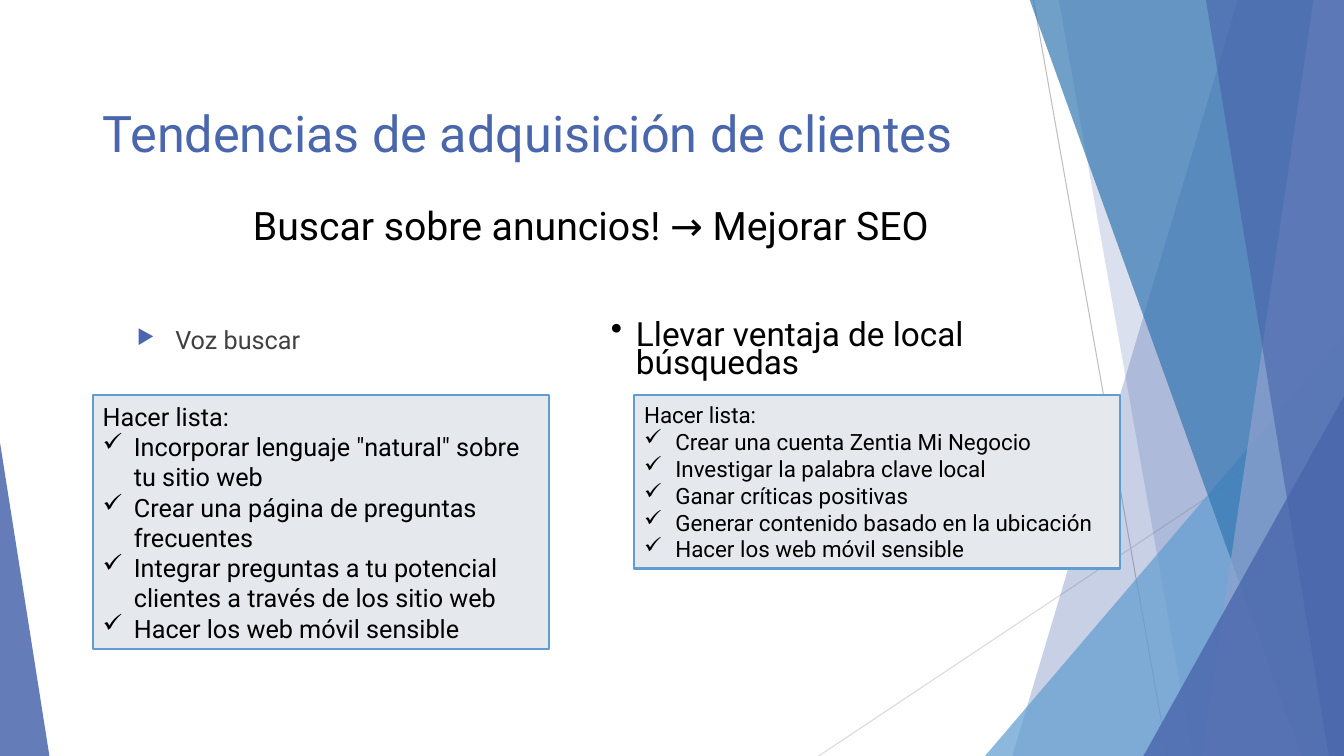
import pptx
import pptx.dml.color
import pptx.enum.shapes
import pptx.enum.text
import pptx.oxml
import pptx.oxml.ns
import pptx.util
from pptx.util import Inches

# Content
FONT = "Roboto"
BLUE, SKY, BLACK = "4A66AC", "629DD1", "000000"
TITLE = "Tendencias de adquisición de clientes"
SUBTITLE = "Buscar sobre anuncios! → Mejorar SEO"
VOICE = "Voz buscar"
LOCAL = "Llevar ventaja de local búsquedas"
LIST_HEAD = "Hacer lista:"

# Each list: left, top, width, height, text size, tasks
TASK_LISTS = [
    (0.92, 3.92, 4.53, 2.52, 18, [
        'Incorporar lenguaje "natural" sobre tu sitio web',
        "Crear una página de preguntas frecuentes",
        "Integrar preguntas a tu potencial clientes a través de los sitio web",
        "Hacer los web móvil sensible",
    ]),
    (6.29, 3.92, 4.82, 1.72, 16, [
        "Crear una cuenta Zentia Mi Negocio",
        "Investigar la palabra clave local",
        "Ganar críticas positivas",
        "Generar contenido basado en la ubicación",
        "Hacer los web móvil sensible",
    ]),
]

# Backdrop, from back to front
RIGHT, TOP, BOTTOM = 13.33, -0.01, 7.5
RAYS = [(10.25, 0, 11.58, BOTTOM, "BFBFBF"), (RIGHT, 4.03, 8.12, BOTTOM, "D9D9D9")]
# Ribbon: "ribbon", left end at the top, left end at the bottom, colour, opacity
# Triangle: "triangle", left, top, width, apex, colour, opacity
BACKDROP = [
    ("ribbon", 12.28, 10.04, BLUE, 30),
    ("ribbon", 10.5, 11.83, BLUE, 20),
    ("triangle", 9.77, 3.33, 3.56, 1, SKY, 72),
    ("ribbon", 10.21, 12.91, "3477B2", 70),
    ("ribbon", 13.03, 11.92, "90A2CF", 70),
    ("ribbon", 11.96, 13.18, BLUE, 65),
    ("triangle", 11.34, 3.93, 1.99, 1, BLUE, 80),
    ("triangle", 0, 4.39, 0.49, 0, BLUE, 85),
]

deck = pptx.Presentation()
deck.slide_width, deck.slide_height = Inches(RIGHT), Inches(BOTTOM)
page = deck.slides.add_slide(deck.slide_layouts[6])
shapes = page.shapes


def color(code):
    return pptx.dml.color.RGBColor.from_string(code)


def add_element(parent, tag, **attributes):
    element = pptx.oxml.ns.qn(tag)
    child = parent.makeelement(element, attributes)
    parent.append(child)
    return child


def fill_shape(shape, code, opacity=100):
    shape.shadow.inherit = False
    shape.fill.solid()
    shape.fill.fore_color.rgb = color(code)
    shape.line.fill.background()
    if opacity < 100:
        tint = shape.fill._xPr.find(".//" + pptx.oxml.ns.qn("a:srgbClr"))
        add_element(tint, "a:alpha", val=str(opacity * 1000))


def write(para, text, size, code=BLACK, bullet=None, indent=0.0,
          bullet_color=None, bullet_scale=None):
    para.text = text
    para.alignment = pptx.enum.text.PP_ALIGN.LEFT
    if bullet:
        properties = para._p.get_or_add_pPr()
        properties.set("marL", str(Inches(indent)))
        properties.set("indent", str(-Inches(indent)))
        if bullet_color:
            add_element(add_element(properties, "a:buClr"), "a:srgbClr", val=bullet_color)
        if bullet_scale:
            add_element(properties, "a:buSzPct", val=str(bullet_scale * 1000))
        add_element(properties, "a:buChar", char=bullet)
    para.font.name = FONT
    para.font.size = pptx.util.Pt(size)
    para.font.color.rgb = color(code)


def add_text(left, top, width, height, text, size, **style):
    box = shapes.add_textbox(*map(Inches, (left, top, width, height)))
    box.text_frame.word_wrap = True
    para = box.text_frame.paragraphs[0]
    write(para, text, size, **style)
    return para


# Thin rays
for x1, y1, x2, y2, code in RAYS:
    ray = shapes.add_connector(pptx.enum.shapes.MSO_CONNECTOR.STRAIGHT,
                               *map(Inches, (x1, y1, x2, y2)))
    ray.line.color.rgb = color(code)
    ray.line.width = pptx.util.Pt(0.75)
    add_element(ray._element.spPr, "a:effectLst")

# Ribbons and triangles
for kind, *geometry, code, opacity in BACKDROP:
    if kind == "ribbon":
        top_x, bottom_x = geometry
        outline = [(RIGHT, TOP), (RIGHT, BOTTOM), (bottom_x, BOTTOM)]
        builder = shapes.build_freeform(Inches(top_x), Inches(TOP))
        builder.add_line_segments([(Inches(x), Inches(y)) for x, y in outline], close=True)
        facet = builder.convert_to_shape()
    else:
        left, top, width, apex = geometry
        facet = shapes.add_shape(pptx.enum.shapes.MSO_SHAPE.ISOSCELES_TRIANGLE,
                                 *map(Inches, (left, top, width, BOTTOM - top)))
        facet.adjustments[0] = apex
    fill_shape(facet, code, opacity)

# Headings
add_text(0.92, 0.96, 10.72, 1.45, TITLE, 36, code=BLUE)
add_text(2.41, 1.95, 8.92, 0.57, SUBTITLE, 28)
add_text(1.26, 3.17, 4.82, 0.68, VOICE, 18, code="404040", bullet="▶", indent=0.38,
         bullet_color=BLUE, bullet_scale=80)
local = add_text(5.96, 3.17, 5.14, 0.68, LOCAL, 23.8, bullet="•", indent=0.25)
local.line_spacing = 0.7

# Task lists
for left, top, width, height, size, tasks in TASK_LISTS:
    panel = shapes.add_shape(pptx.enum.shapes.MSO_SHAPE.RECTANGLE,
                             *map(Inches, (left, top, width, height)))
    fill_shape(panel, "E5E9EE")
    panel.line.color.rgb = color(SKY)
    panel.line.width = pptx.util.Pt(1.5)
    frame = panel.text_frame
    frame.word_wrap = True
    frame.vertical_anchor = pptx.enum.text.MSO_ANCHOR.MIDDLE
    write(frame.paragraphs[0], LIST_HEAD, size)
    for task in tasks:
        write(frame.add_paragraph(), task, size, bullet="✓", indent=0.31)

deck.save("out.pptx")
